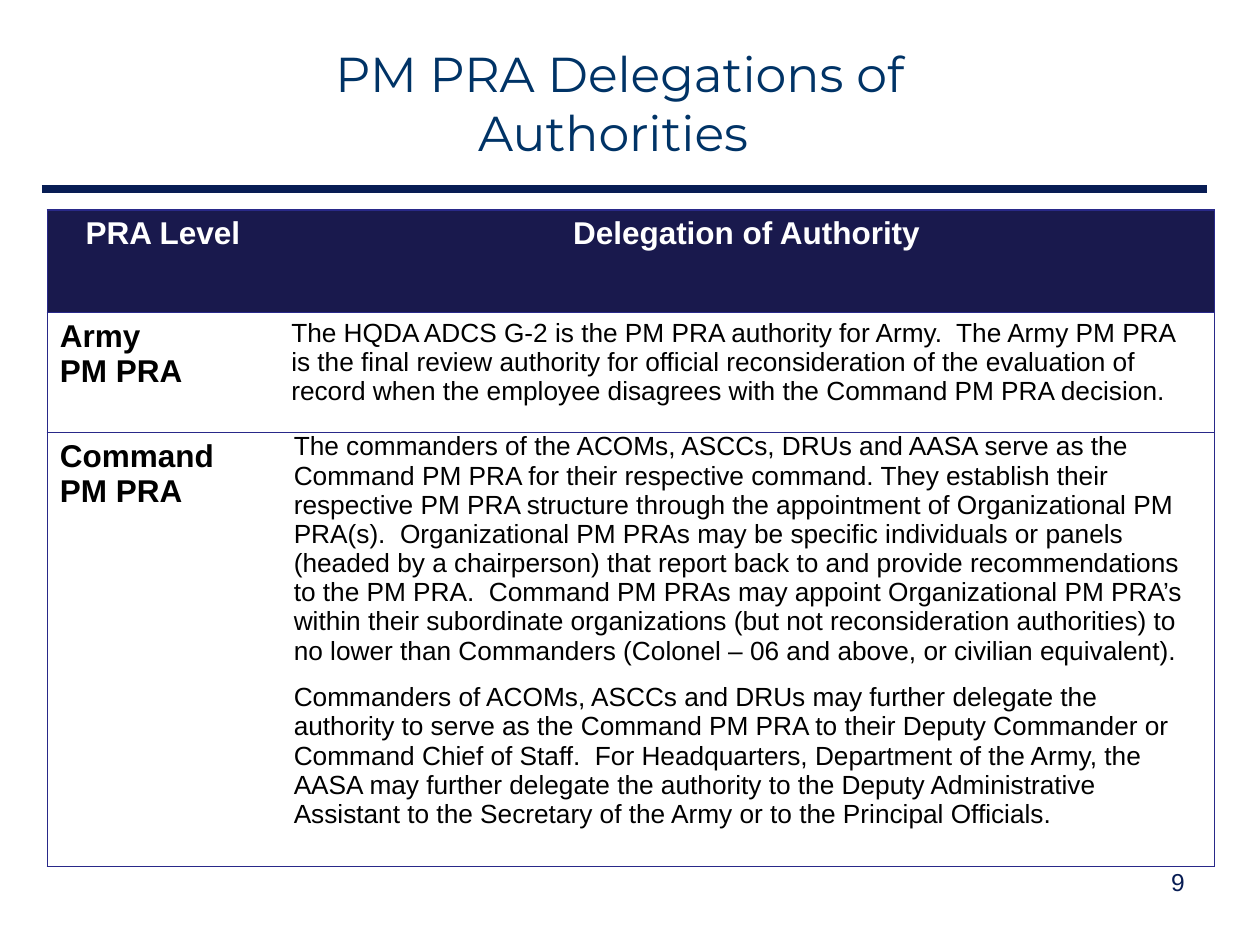
from dataclasses import dataclass

from pptx import Presentation
from pptx import util as u
from pptx.dml.color import RGBColor
from pptx.enum import shapes, text
from pptx.oxml import ns
from lxml import etree

Pt = u.Pt
LEFT, CENTER, RIGHT = (text.PP_ALIGN.LEFT, text.PP_ALIGN.CENTER,
                       text.PP_ALIGN.RIGHT)


@dataclass(frozen=True)
class Theme:
    title_font: str = "Montserrat"
    body_font: str = "Arial"
    title_color: str = "003366"
    navy: str = "081D54"
    header_fill: str = "19194D"
    border: str = "292989"
    white: str = "FFFFFF"
    black: str = "000000"
    title_size: float = 28
    label_size: float = 18
    body_size: float = 15
    number_size: float = 14


class Deck:
    """Holds the theme and the current slide."""

    def __init__(self, prs, theme):
        self.theme = theme
        self.s = prs.slides.add_slide(prs.slide_layouts[5])

    def add_text(self, tf, lines, size, color, font=None, bold=False,
                 align=LEFT, after=0):
        tf.word_wrap = True
        for i, line in enumerate(lines):
            p = tf.paragraphs[0] if i == 0 else tf.add_paragraph()
            p.alignment = align
            p.space_before, p.space_after = Pt(0), Pt(after)
            r = p.add_run()
            r.text = line
            f = r.font
            f.name, f.size, f.bold = font or self.theme.body_font, Pt(size), bold
            f.color.rgb = RGBColor.from_string(color)

    def place(self, sp, x, y, w, h):
        sp.left, sp.top, sp.width, sp.height = Pt(x), Pt(y), Pt(w), Pt(h)

    def title(self, line, x, y, w, h):
        t, sp = self.theme, self.s.shapes.title
        self.place(sp, x, y, w, h)
        sp.text_frame.vertical_anchor = text.MSO_ANCHOR.MIDDLE
        self.add_text(sp.text_frame, [line], t.title_size, t.title_color,
                      t.title_font, align=CENTER)

    def rule(self, x1, x2, y, width):
        ln = self.s.shapes.add_connector(
            shapes.MSO_CONNECTOR.STRAIGHT, Pt(x1), Pt(y), Pt(x2), Pt(y))
        ln.line.color.rgb = RGBColor.from_string(self.theme.navy)
        ln.line.width = Pt(width)
        etree.SubElement(ln._element.spPr, ns.qn("a:effectLst"))

    def number(self, line, x, y, w, h):
        sp = self.s.shapes.add_textbox(Pt(x), Pt(y), Pt(w), Pt(h))
        self.add_text(sp.text_frame, [line], self.theme.number_size,
                      self.theme.navy, align=RIGHT)

    def borders(self, cell, sides):
        """Draw the given sides; leave the others without a line."""
        pr = cell._tc.get_or_add_tcPr()
        for i, side in enumerate("LRTB"):
            ln = etree.Element(ns.qn("a:ln" + side), w=str(Pt(0.75)))
            if side in sides:
                fill = etree.SubElement(ln, ns.qn("a:solidFill"))
                etree.SubElement(fill, ns.qn("a:srgbClr"),
                                 val=self.theme.border)
            else:
                etree.SubElement(ln, ns.qn("a:noFill"))
            pr.insert(i, ln)

    def table(self, header, rows, x, y, widths, heights):
        t = self.theme
        tbl = self.s.shapes.add_table(
            len(heights), len(widths), Pt(x), Pt(y),
            Pt(sum(widths)), Pt(sum(heights))).table
        tbl.horz_banding = False
        for col, w in zip(tbl.columns, widths):
            col.width = Pt(w)
        for row, h in zip(tbl.rows, heights):
            row.height = Pt(h)

        # Header row
        for c, line in enumerate(header):
            cell = tbl.cell(0, c)
            cell.fill.solid()
            cell.fill.fore_color.rgb = RGBColor.from_string(t.header_fill)
            self.add_text(cell.text_frame, [line], t.label_size, t.white,
                          bold=True, align=CENTER)

        # Level and authority rows
        for n, (level, authority) in enumerate(rows, 1):
            label, body = tbl.cell(n, 0), tbl.cell(n, 1)
            label.fill.background()
            body.fill.background()
            self.add_text(label.text_frame, level, t.label_size, t.black,
                          bold=True)
            several = len(authority) > 1
            if several:
                body.margin_left = body.margin_right = Pt(8.64)
                body.margin_top = body.margin_bottom = Pt(0)
            self.add_text(body.text_frame, authority, t.body_size, t.black,
                          after=10 if several else 0)

        # Outer frame and row lines, no line between the columns
        for n in range(len(heights)):
            self.borders(tbl.cell(n, 0), "LTB")
            self.borders(tbl.cell(n, 1), "RTB")


HEADER = ["PRA Level", "Delegation of Authority"]
ROWS = [
    (["Army", "PM PRA"], [
        "The HQDA ADCS G-2 is the PM PRA authority for Army.  The Army PM PRA "
        "is the final review authority for official reconsideration of the "
        "evaluation of record when the employee disagrees with the Command "
        "PM PRA decision."]),
    (["Command", "PM PRA"], [
        "The commanders of the ACOMs, ASCCs, DRUs and AASA serve as the "
        "Command PM PRA for their respective command. They establish their "
        "respective PM PRA structure through the appointment of "
        "Organizational PM PRA(s).  Organizational PM PRAs may be specific "
        "individuals or panels (headed by a chairperson) that report back to "
        "and provide recommendations to the PM PRA.  Command PM PRAs may "
        "appoint Organizational PM PRA’s within their subordinate "
        "organizations (but not reconsideration authorities) to no lower than "
        "Commanders (Colonel – 06 and above, or civilian equivalent).",
        "Commanders of ACOMs, ASCCs and DRUs may further delegate the "
        "authority to serve as the Command PM PRA to their Deputy Commander "
        "or Command Chief of Staff.  For Headquarters, Department of the "
        "Army, the AASA may further delegate the authority to the Deputy "
        "Administrative Assistant to the Secretary of the Army or to the "
        "Principal Officials."]),
]


def main():
    prs = Presentation()
    prs.slide_width, prs.slide_height = Pt(720), Pt(540)
    deck = Deck(prs, Theme())
    deck.rule(24, 690, 108, 4.5)
    deck.title("PM PRA Delegations of Authorities ", 138, 14.4, 432, 88)
    deck.number("9", 516, 492, 168, 37.5)
    deck.table(HEADER, ROWS, 27, 120, [132.25, 534.75], [58.5, 68.5, 248])
    prs.save("out.pptx")


if __name__ == "__main__":
    main()
